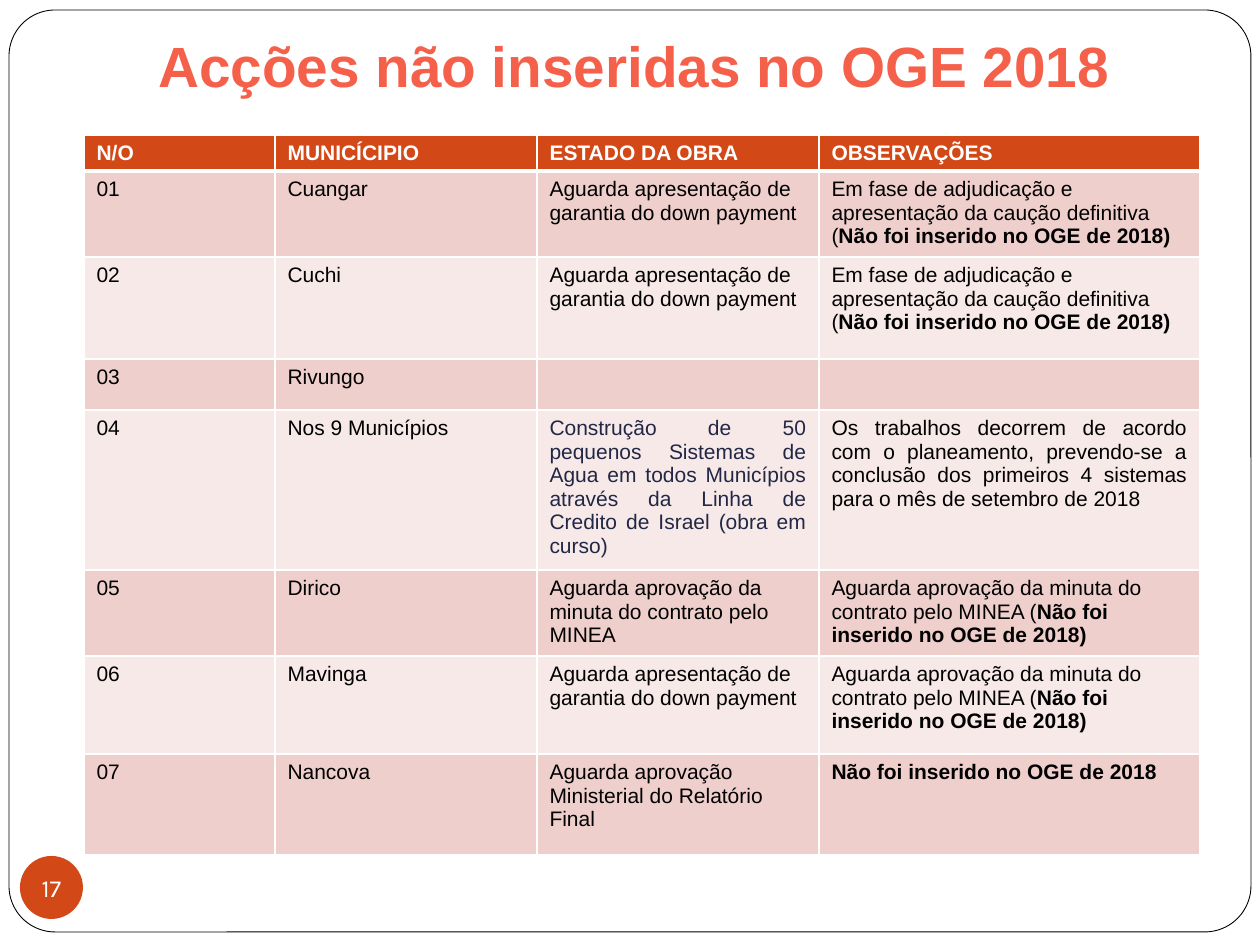
import pptx
import pptx.dml.color
import pptx.enum.shapes
import pptx.enum.text
import pptx.oxml.ns
import pptx.util
from lxml import etree

RGB = pptx.dml.color.RGBColor
ALIGN = pptx.enum.text.PP_ALIGN
MIDDLE = pptx.enum.text.MSO_ANCHOR.MIDDLE
SHAPE = pptx.enum.shapes.MSO_SHAPE

WHITE = RGB(0xFF, 0xFF, 0xFF)
BLACK = RGB(0x00, 0x00, 0x00)
ORANGE = RGB(0xD3, 0x48, 0x17)
CORAL = RGB(0xF5, 0x60, 0x4A)
NAVY = RGB(0x21, 0x27, 0x45)
BANDS = (RGB(0xEF, 0xCF, 0xCC), RGB(0xF7, 0xE9, 0xE8))

PX = 914400 / 126
COLUMN_WIDTHS = (191, 262, 282, 381)
ROW_HEIGHTS = (36, 86, 102, 51, 160, 86, 98, 101)

DOWN_PAYMENT = "Aguarda apresentação de garantia do down payment"
MINUTA = "Aguarda aprovação da minuta do contrato pelo MINEA"
ADJUDICATION = "Em fase de adjudicação e apresentação da caução definitiva ("
NOT_INCLUDED = "Não foi inserido no OGE de 2018"
SYSTEMS = ("Construção de 50 pequenos Sistemas de Agua em todos Municípios "
           "através da Linha de Credito de Israel (obra em curso)")
PROGRESS = ("Os trabalhos decorrem de acordo com o planeamento, prevendo-se a "
            "conclusão dos primeiros 4 sistemas para o mês de setembro de 2018")

HEADERS = ("N/O", "MUNICÍCIPIO", "ESTADO DA OBRA", "OBSERVAÇÕES")
# município, estado, observação normal, observação em negrito
WORKS = (
    ("Cuangar", DOWN_PAYMENT, ADJUDICATION, NOT_INCLUDED + ")"),
    ("Cuchi", DOWN_PAYMENT, ADJUDICATION, NOT_INCLUDED + ")"),
    ("Rivungo", "", "", ""),
    ("Nos 9 Municípios", SYSTEMS, PROGRESS, ""),
    ("Dirico", MINUTA, MINUTA + " (", NOT_INCLUDED + ")"),
    ("Mavinga", DOWN_PAYMENT, MINUTA + " (", NOT_INCLUDED + ")"),
    ("Nancova", "Aguarda aprovação Ministerial do Relatório Final", "", NOT_INCLUDED),
)


def px(length):
    return pptx.util.Emu(round(length * PX))


class SlideBuilder:
    def __init__(self, slide):
        self.slide = slide

    def add_run(self, paragraph, text, size, color, bold=False, font="Arial"):
        run = paragraph.add_run()
        run.text = text
        run.font.name = font
        run.font.size = pptx.util.Pt(size)
        run.font.bold = bold
        run.font.color.rgb = color

    def clear_insets(self, frame):
        frame.margin_left = frame.margin_right = 0
        frame.margin_top = frame.margin_bottom = 0
        frame.vertical_anchor = MIDDLE

    def add_shape(self, kind, left, top, width, height, fill, line=None):
        shape = self.slide.shapes.add_shape(
            kind, px(left), px(top), px(width), px(height))
        shape.shadow.inherit = False
        shape.fill.solid()
        shape.fill.fore_color.rgb = fill
        if line is None:
            shape.line.fill.background()
        else:
            shape.line.color.rgb = line
            shape.line.width = pptx.util.Pt(0.5)
        return shape

    def add_badge(self, text, left, top, size):
        badge = self.add_shape(SHAPE.OVAL, left, top, size, size, ORANGE)
        frame = badge.text_frame
        self.clear_insets(frame)
        frame.word_wrap = False
        number = frame.paragraphs[0]
        number.alignment = ALIGN.CENTER
        self.add_run(number, text, 14, WHITE, font="Karla")

    def set_title(self, text, left, top, width, height):
        """Fill the title placeholder and bring it in front of the frame."""
        title = self.slide.shapes.title
        title.left, title.top = px(left), px(top)
        title.width, title.height = px(width), px(height)
        self.clear_insets(title.text_frame)
        heading = title.text_frame.paragraphs[0]
        heading.alignment = ALIGN.CENTER
        self.add_run(heading, text, 32.4, CORAL, bold=True)
        title.element.getparent().append(title.element)

    def add_table(self, left, top, widths, heights):
        table = self.slide.shapes.add_table(
            len(heights), len(widths), px(left), px(top),
            px(sum(widths)), px(sum(heights))).table
        for column, width in zip(table.columns, widths):
            column.width = px(width)
        for row, height in zip(table.rows, heights):
            row.height = px(height)
        return table

    def style_cell(self, cell, fill, top=1, bottom=1):
        """Give the cell white borders (widths in points) and a fill."""
        properties = cell._tc.get_or_add_tcPr()
        qn = pptx.oxml.ns.qn
        for side, points in zip("LRTB", (1, 1, top, bottom)):
            border = etree.SubElement(
                properties, qn("a:ln" + side), w=str(pptx.util.Pt(points)))
            solid = etree.SubElement(border, qn("a:solidFill"))
            etree.SubElement(solid, qn("a:srgbClr"), val=str(WHITE))
        cell.fill.solid()
        cell.fill.fore_color.rgb = fill

    def fill_cell(self, cell, text, color=BLACK, bold_text="", justified=False):
        paragraph = cell.text_frame.paragraphs[0]
        paragraph.alignment = ALIGN.JUSTIFY if justified else ALIGN.LEFT
        for part, bold in ((text, False), (bold_text, True)):
            if part:
                self.add_run(paragraph, part, 12, color, bold)


def main():
    presentation = pptx.Presentation()
    presentation.slide_width = px(1260)
    presentation.slide_height = px(945)
    slide = SlideBuilder(
        presentation.slides.add_slide(presentation.slide_layouts[5]))

    frame = slide.add_shape(
        SHAPE.ROUNDED_RECTANGLE, 9, 10, 1242, 922, WHITE, BLACK)
    frame.adjustments[0] = 0.05
    slide.add_badge("17", 20, 856, 63)
    slide.set_title("Acções não inseridas no OGE 2018", 123, 25, 1022, 80)

    table = slide.add_table(84, 135, COLUMN_WIDTHS, ROW_HEIGHTS)
    for column, header in enumerate(HEADERS):
        cell = table.cell(0, column)
        slide.style_cell(cell, ORANGE, bottom=3)
        slide.fill_cell(cell, "", WHITE, bold_text=header)

    for row, (town, status, note, bold_note) in enumerate(WORKS, start=1):
        cells = [table.cell(row, column) for column in range(len(HEADERS))]
        for cell in cells:
            slide.style_cell(cell, BANDS[(row - 1) % 2], top=3 if row == 1 else 1)
        is_systems = status == SYSTEMS
        slide.fill_cell(cells[0], f"{row:02d}")
        slide.fill_cell(cells[1], town)
        slide.fill_cell(cells[2], status, NAVY if is_systems else BLACK,
                        justified=is_systems)
        slide.fill_cell(cells[3], note, bold_text=bold_note, justified=is_systems)

    presentation.save("out.pptx")


if __name__ == "__main__":
    main()
